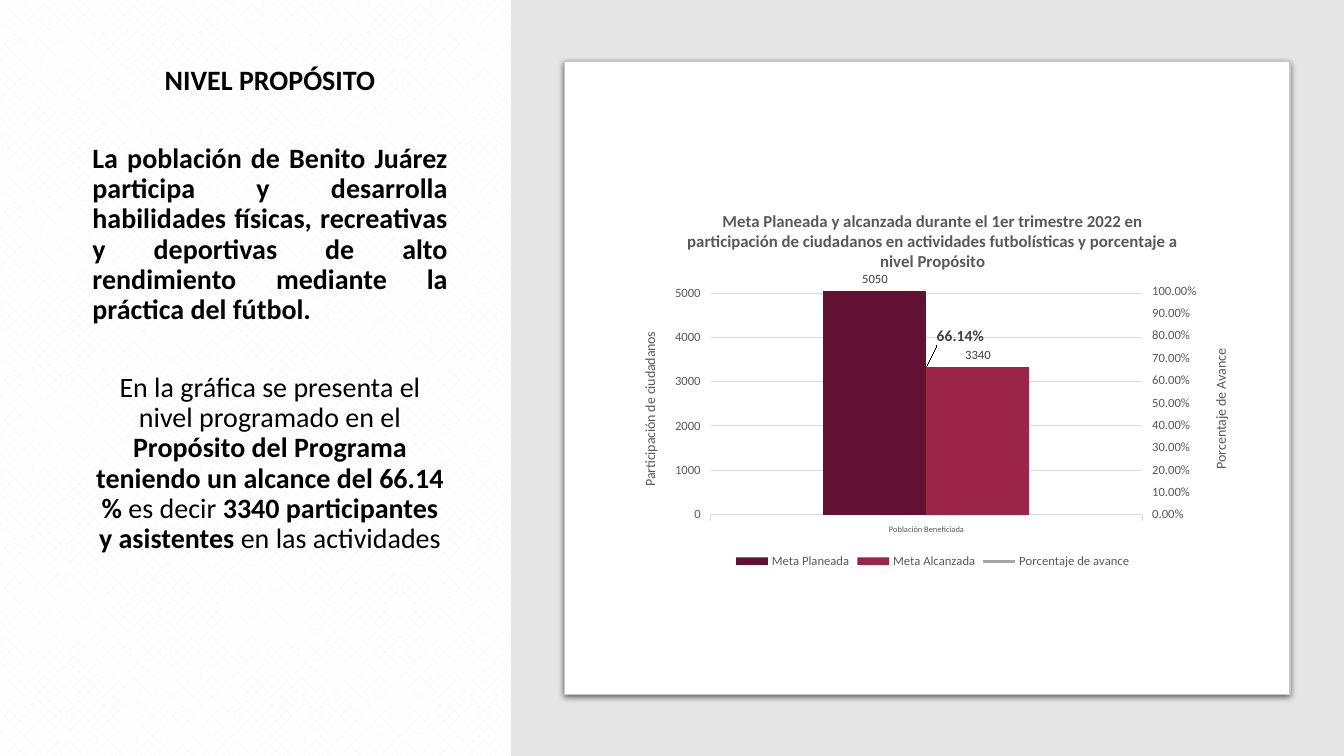
"""Build the purpose-level slide with its planned and achieved goal chart."""
from dataclasses import dataclass
from typing import Optional

import pptx
import pptx.chart.axis
import pptx.chart.data
import pptx.dml.color
import pptx.enum.chart
import pptx.enum.dml
import pptx.enum.shapes
import pptx.enum.text
import pptx.oxml
import pptx.oxml.ns
import pptx.util

Cm = pptx.util.Cm
Pt = pptx.util.Pt
FONT = "Calibri"
GRAY = "595959"
LIGHT_GRAY = "D9D9D9"
LABEL_GRAY = "404040"
CENTER = pptx.enum.text.PP_ALIGN.CENTER
JUSTIFY = pptx.enum.text.PP_ALIGN.JUSTIFY


@dataclass
class Panel:
    left: float
    top: float
    width: float
    height: float
    fill: str
    shape_type: int
    line: Optional[str] = None
    shadow: bool = False


@dataclass
class Passage:
    runs: list[tuple[str, bool]]
    alignment: int
    space_after: float


PANELS = [
    Panel(12.88, 0, 20.99, 19.05, "E7E6E6", pptx.enum.shapes.MSO_SHAPE.RECTANGLE),
    Panel(14.22, 1.55, 18.29, 15.95, "FFFFFF",
          pptx.enum.shapes.MSO_SHAPE.ROUNDED_RECTANGLE, "C8CACA", True),
]
PASSAGES = [
    Passage([("NIVEL PROPÓSITO", True)], CENTER, 34),
    Passage([("La población de Benito Juárez participa y desarrolla habilidades físicas, "
              "recreativas y deportivas de alto rendimiento mediante la práctica del fútbol.",
              True)], JUSTIFY, 34),
    Passage([("En la gráfica se presenta el nivel programado en el ", False),
             ("Propósito del Programa teniendo un alcance del 66.14 % ", True),
             ("es decir ", False),
             ("3340 participantes y asistentes", True),
             (" en las actividades", False)], CENTER, 6),
]
CHART_NS = pptx.oxml.ns.nsdecls("c")
LINE_PLOT = f"""<c:lineChart {CHART_NS}><c:grouping val="standard"/><c:varyColors val="0"/>
<c:marker val="1"/><c:axId val="5001"/><c:axId val="5002"/></c:lineChart>"""
RIGHT_AXIS = f"""<c:valAx {CHART_NS}><c:axId val="5002"/><c:scaling/><c:delete val="0"/>
<c:axPos val="r"/><c:majorTickMark val="out"/><c:minorTickMark val="none"/>
<c:tickLblPos val="nextTo"/><c:crossAx val="5001"/><c:crosses val="max"/></c:valAx>"""
HIDDEN_AXIS = f"""<c:catAx {CHART_NS}><c:axId val="5001"/><c:scaling/><c:delete val="1"/>
<c:axPos val="b"/><c:crossAx val="5002"/><c:crosses val="autoZero"/></c:catAx>"""
SHADOW = f"""<a:effectLst {pptx.oxml.ns.nsdecls("a")}>
<a:outerShdw blurRad="57150" dist="19050" dir="5400000" algn="ctr" rotWithShape="0">
<a:srgbClr val="000000"><a:alpha val="63000"/></a:srgbClr></a:outerShdw></a:effectLst>"""


def color(value: str) -> pptx.dml.color.RGBColor:
    return pptx.dml.color.RGBColor.from_string(value)


def style_font(font, size: float, value: str, bold: bool = False) -> None:
    font.name, font.size, font.bold = FONT, Pt(size), bold
    font.color.rgb = color(value)


def style_line(line, value: str, width: float) -> None:
    line.color.rgb = color(value)
    line.width = Pt(width)


def manual_layout(x: float, y: float, size: Optional[tuple[float, float]] = None):
    inner, modes, extent = "", "", ""
    if size:
        inner = '<c:layoutTarget val="inner"/>'
        modes = '<c:xMode val="edge"/><c:yMode val="edge"/>'
        extent = f'<c:w val="{size[0]}"/><c:h val="{size[1]}"/>'
    return pptx.oxml.parse_xml(
        f'<c:layout {CHART_NS}><c:manualLayout>{inner}{modes}<c:x val="{x}"/>'
        f'<c:y val="{y}"/>{extent}</c:manualLayout></c:layout>')


def add_panel(slide, panel: Panel) -> None:
    shape = slide.shapes.add_shape(panel.shape_type, Cm(panel.left), Cm(panel.top),
                                   Cm(panel.width), Cm(panel.height))
    if len(shape.adjustments):
        shape.adjustments[0] = 0
    shape.fill.solid()
    shape.fill.fore_color.rgb = color(panel.fill)
    if panel.line:
        style_line(shape.line, panel.line, 0.75)
    else:
        shape.line.fill.background()
    if panel.shadow:
        shape._element.spPr.append(pptx.oxml.parse_xml(SHADOW))
    else:
        shape.shadow.inherit = False


def add_passages(slide) -> None:
    text_frame = slide.shapes.add_textbox(Cm(2.08), Cm(1.55), Cm(9.45), Cm(14.91)).text_frame
    text_frame.word_wrap = True
    for index, passage in enumerate(PASSAGES):
        paragraph = text_frame.add_paragraph() if index else text_frame.paragraphs[0]
        paragraph.alignment = passage.alignment
        paragraph.line_spacing = 0.9
        paragraph.space_after = Pt(passage.space_after)
        for text, bold in passage.runs:
            run = paragraph.add_run()
            run.text = text
            style_font(run.font, 20, "000000", bold)


def style_title(titled, text: str, size: float, bold: bool, vertical: bool) -> None:
    text_frame = titled.text_frame
    text_frame.text = text
    style_font(text_frame.paragraphs[0].runs[0].font, size, GRAY, bold)
    if vertical:
        properties = text_frame._element.find(pptx.oxml.ns.qn("a:bodyPr"))
        properties.set("rot", "-5400000")
        properties.set("vert", "horz")


def style_value_axis(axis, title: str, maximum: float, major: float, number_format: str) -> None:
    axis.minimum_scale, axis.maximum_scale, axis.major_unit = 0, maximum, major
    axis.tick_labels.number_format = number_format
    axis.tick_labels.number_format_is_linked = False
    style_font(axis.tick_labels.font, 9, GRAY)
    axis.format.line.fill.background()
    style_title(axis.axis_title, title, 10, False, True)


def add_progress_line(chart) -> None:
    bar_plot = chart._chartSpace.chart.plotArea.find(pptx.oxml.ns.qn("c:barChart"))
    series_element = bar_plot.findall(pptx.oxml.ns.qn("c:ser"))[2]
    for bar_setting in series_element.findall(pptx.oxml.ns.qn("c:invertIfNegative")):
        series_element.remove(bar_setting)
    line_plot = pptx.oxml.parse_xml(LINE_PLOT)
    line_plot.insert(2, series_element)
    bar_plot.addnext(line_plot)
    right_axis = pptx.oxml.parse_xml(RIGHT_AXIS)
    left_axis = chart._chartSpace.chart.plotArea.find(pptx.oxml.ns.qn("c:valAx"))
    left_axis.addnext(right_axis)
    right_axis.addnext(pptx.oxml.parse_xml(HIDDEN_AXIS))
    style_value_axis(pptx.chart.axis.ValueAxis(right_axis), "Porcentaje de Avance", 1, 0.1, "0.00%")

    series = chart.plots[1].series[0]
    series.smooth = False
    series.marker.style = pptx.enum.chart.XL_MARKER_STYLE.NONE
    style_line(series.format.line, "A5A5A5", 2.25)
    labels = series.data_labels
    labels.show_value = True
    labels.number_format, labels.number_format_is_linked = "0.00%", False
    style_font(labels.font, 11, LABEL_GRAY, True)
    label = series.points[0].data_label
    style_font(label.font, 11, LABEL_GRAY, True)
    label.position = pptx.enum.chart.XL_LABEL_POSITION.RIGHT
    for label_element in series_element.iter(pptx.oxml.ns.qn("c:dLbl")):
        label_element.insert(1, manual_layout(0.01, -0.08))


def add_goal_chart(slide) -> None:
    data = pptx.chart.data.CategoryChartData()
    data.categories = ["Población Beneficiada"]
    data.add_series("Meta Planeada", [5050])
    data.add_series("Meta Alcanzada", [3340])
    data.add_series("Porcentaje de avance", [0.6614], "0.00%")
    chart = slide.shapes.add_chart(pptx.enum.chart.XL_CHART_TYPE.COLUMN_CLUSTERED, Cm(15.62),
                                   Cm(4.88), Cm(15.77), Cm(9.55), data).chart
    style_font(chart.font, 10, "000000")
    style_title(chart.chart_title, "Meta Planeada y alcanzada durante el 1er trimestre 2022 en "
                "participación de ciudadanos en actividades futbolísticas y porcentaje a "
                "nivel Propósito", 12, True, False)
    chart.chart_title.include_in_layout = False
    chart.has_legend = True
    chart.legend.position = pptx.enum.chart.XL_LEGEND_POSITION.BOTTOM
    chart.legend.include_in_layout = False
    style_font(chart.legend.font, 9, GRAY)
    style_font(chart.category_axis.tick_labels.font, 6, GRAY)
    style_line(chart.category_axis.format.line, LIGHT_GRAY, 0.75)
    style_value_axis(chart.value_axis, "Participación de ciudadanos", 5050, 1000, "General")
    style_line(chart.value_axis.major_gridlines.format.line, LIGHT_GRAY, 0.75)

    add_progress_line(chart)
    columns = chart.plots[0]
    columns.gap_width, columns.overlap, columns.vary_by_categories = 219, 0, False
    for series, fill in zip(columns.series, ("621132", "9D2449")):
        series.format.fill.solid()
        series.format.fill.fore_color.rgb = color(fill)
        series.data_labels.show_value = True
        series.data_labels.position = pptx.enum.chart.XL_LABEL_POSITION.OUTSIDE_END
        style_font(series.data_labels.font, 9, LABEL_GRAY)
    plot_area = chart._chartSpace.chart.plotArea
    for layout in plot_area.findall(pptx.oxml.ns.qn("c:layout")):
        plot_area.remove(layout)
    plot_area.insert(0, manual_layout(0.145, 0.257, (0.69, 0.59)))


def main() -> None:
    presentation = pptx.Presentation()
    presentation.slide_width, presentation.slide_height = Cm(33.87), Cm(19.05)
    slide = presentation.slides.add_slide(presentation.slide_layouts[6])
    background = slide.background.fill
    background.patterned()
    background.pattern = pptx.enum.dml.MSO_PATTERN.PERCENT_30
    background.fore_color.rgb = color("F2F2F2")
    background.back_color.rgb = color("FFFFFF")
    add_passages(slide)
    for panel in PANELS:
        add_panel(slide, panel)
    add_goal_chart(slide)
    presentation.save("out.pptx")


if __name__ == "__main__":
    main()
